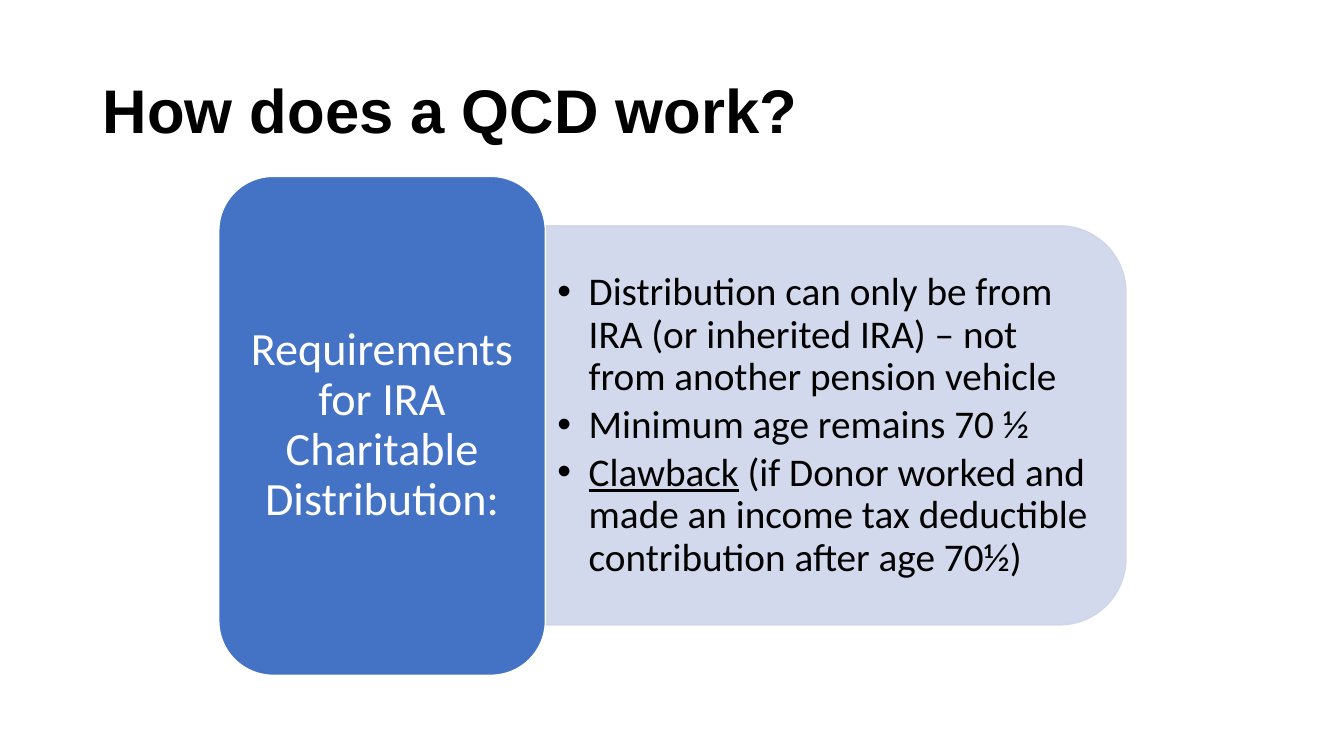
from lxml.etree import SubElement
from pptx import Presentation
from pptx.dml.color import RGBColor
from pptx.enum.shapes import MSO_SHAPE
from pptx.enum.text import MSO_ANCHOR, PP_ALIGN
from pptx.oxml.ns import qn
from pptx.util import Inches, Pt

WIDE, HIGH = Inches(13.33), Inches(7.5)
BLACK, WHITE, BLUE, PALE = "000000", "FFFFFF", "4472C4", "CFD5EA"

TITLE = "How does a QCD work?"
HEAD = "Requirements for IRA Charitable Distribution:"
RULES = [
    ["Distribution can only be from IRA (or inherited IRA) – not from another pension vehicle"],
    ["Minimum age remains 70 ½"],
    ["Clawback", " (if Donor worked and made an income tax deductible contribution after age 70½)"],
]


def color(code):
    return RGBColor.from_string(code)


def place(x, y, w, h):
    """Turn percentages of the slide into lengths."""
    return [int(side * part / 100)
            for side, part in zip((WIDE, HIGH, WIDE, HIGH), (x, y, w, h))]


def style(para, size, code, face="Calibri", bold=None):
    para.line_spacing = 0.9
    for run in para.runs:
        font = run.font
        font.name, font.size, font.bold = face, Pt(size), bold
        font.color.rgb = color(code)


def frame(shape, side=0.1, edge=0.05):
    text = shape.text_frame
    text.word_wrap = True
    text.vertical_anchor = MSO_ANCHOR.MIDDLE
    text.margin_left = text.margin_right = Inches(side)
    text.margin_top = text.margin_bottom = Inches(edge)
    return text


def add_block(slide, kind, area, fill, line):
    block = slide.shapes.add_shape(kind, *area)
    block.shadow.inherit = False
    block.fill.solid()
    block.fill.fore_color.rgb = color(fill)
    block.line.color.rgb = color(line)
    block.line.width = Pt(1)
    return block


def add_title(slide):
    title = slide.shapes.title
    title.left, title.top, title.width, title.height = place(6.9, 5.33, 86.25, 19.33)
    text = frame(title)
    text.text = TITLE
    text.paragraphs[0].alignment = PP_ALIGN.LEFT
    style(text.paragraphs[0], 44, BLACK, "Arial", True)


def add_panel(slide):
    # A quarter turn brings the round corners to the right
    x, y, w, h = place(40.58, 29.87, 43.2, 52.8)
    shift = (w - h) // 2
    panel = add_block(slide, MSO_SHAPE.ROUND_2_SAME_RECTANGLE,
                      (x + shift, y - shift, h, w), PALE, PALE)
    panel.rotation = 90
    for tint in panel.element.spPr.iter(qn("a:srgbClr")):
        SubElement(tint, qn("a:alpha"), val="90000")


def add_rules(slide):
    text = frame(slide.shapes.add_textbox(*place(40.58, 32.53, 41.78, 47.6)), 0.12, 0.06)
    for index, parts in enumerate(RULES):
        para = text.add_paragraph() if index else text.paragraphs[0]
        para.level = 1
        for part in parts:
            para.add_run().text = part
        style(para, 28, BLACK)
        para.space_after = Pt(4)
        para.runs[0].font.underline = len(parts) > 1
        # Bullet with a hanging indent
        props = para._p.get_or_add_pPr()
        props.set("marL", str(Inches(0.31)))
        props.set("indent", str(-Inches(0.31)))
        SubElement(props, qn("a:buFont"), typeface="Arial")
        SubElement(props, qn("a:buChar"), char="•")


def add_card(slide):
    card = add_block(slide, MSO_SHAPE.ROUNDED_RECTANGLE,
                     place(16.28, 23.33, 24.3, 66), BLUE, WHITE)
    text = frame(card, 0.14, 0.07)
    text.text = HEAD
    text.paragraphs[0].alignment = PP_ALIGN.CENTER
    style(text.paragraphs[0], 33, WHITE)


def main():
    deck = Presentation()
    deck.slide_width, deck.slide_height = WIDE, HIGH
    slide = deck.slides.add_slide(deck.slide_layouts[5])
    add_title(slide)
    add_panel(slide)
    add_rules(slide)
    add_card(slide)
    deck.save("out.pptx")


if __name__ == "__main__":
    main()
